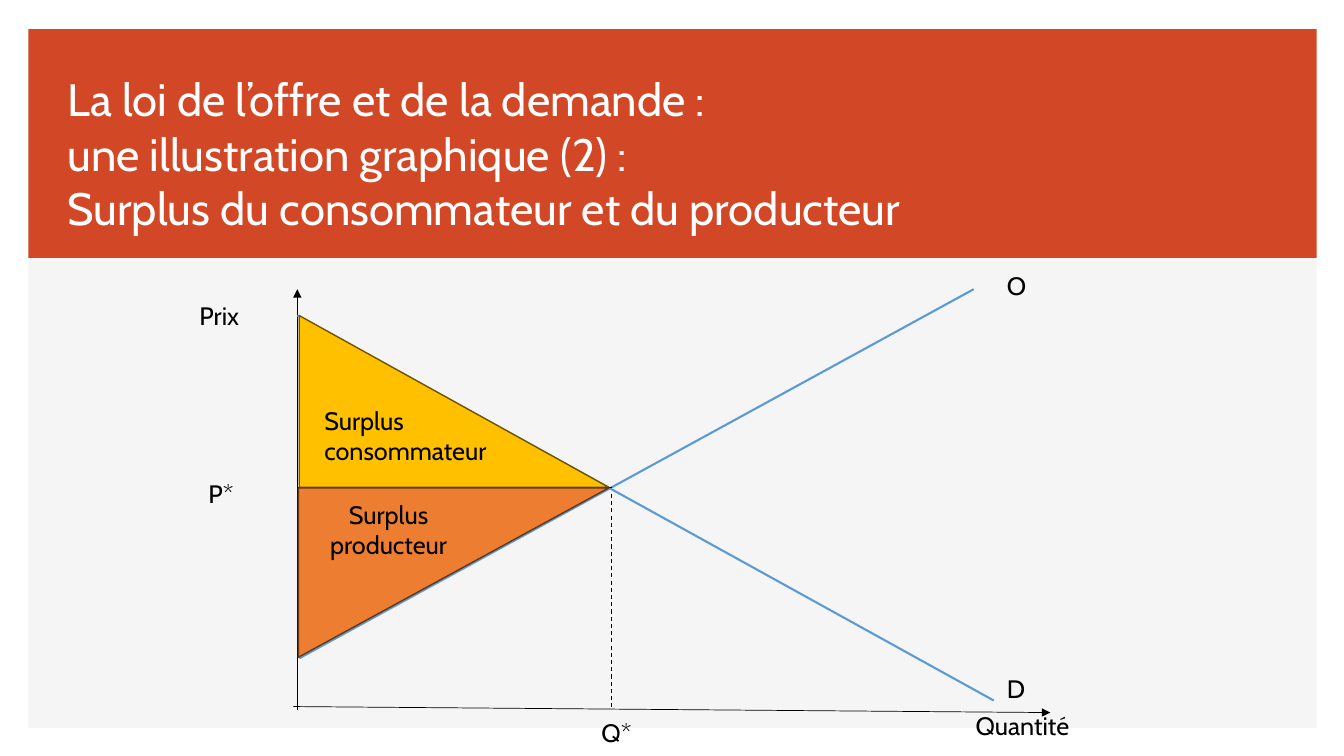
"""Build the slide on consumer and producer surplus."""
from lxml.etree import SubElement
from pptx import Presentation
from pptx.dml.color import RGBColor
from pptx.enum.dml import MSO_LINE
from pptx.enum.shapes import MSO_CONNECTOR, MSO_SHAPE
from pptx.enum.text import MSO_ANCHOR, MSO_AUTO_SIZE, PP_ALIGN
from pptx.oxml.ns import qn
from pptx.util import Pt

FONT = "Cabin"
INK = {
    "panel": "F5F5F5", "band": "D24726", "white": "FFFFFF", "black": "000000",
    "curve": "5B9BD5", "gold": "FFC000", "brown": "705400",
    "orange": "ED7D31", "rust": "683715",
}


def block(kind, box, fill, edge=None):
    shape = slide.shapes.add_shape(kind, *map(Pt, box))
    shape.shadow.inherit = False
    shape.fill.solid()
    shape.fill.fore_color.rgb = RGBColor.from_string(INK[fill])
    if edge:
        shape.line.color.rgb = RGBColor.from_string(INK[edge])
        shape.line.width = Pt(1)
    else:
        shape.line.fill.background()
    return shape


def style(frame, size, color, align):
    for para in frame.paragraphs:
        para.alignment = align
        for run in para.runs:
            run.font.name = FONT
            run.font.size = Pt(size)
            run.font.color.rgb = RGBColor.from_string(INK[color])


deck = Presentation()
deck.slide_width, deck.slide_height = Pt(960), Pt(540)
slide = deck.slides.add_slide(deck.slide_layouts[5])

block(MSO_SHAPE.RECTANGLE, (20.2, 20.9, 920.2, 499), "panel")
block(MSO_SHAPE.RECTANGLE, (20.2, 20.9, 920.2, 163.4), "band")

title = slide.shapes.title
slide.shapes.element.append(title.element)
title.left, title.top, title.width, title.height = map(Pt, (41, 121, 861.8, 50.4))
frame = title.text_frame
frame.text = ("La loi de l’offre et de la demande : \v"
              "une illustration graphique (2) : \v"
              "Surplus du consommateur et du producteur")
frame.word_wrap = True
frame.auto_size = MSO_AUTO_SIZE.NONE
frame.vertical_anchor = MSO_ANCHOR.BOTTOM
style(frame, 32.4, "white", PP_ALIGN.LEFT)

lines = [
    ((209.5, 504.7, 750.2, 509), "black", 0.5, False, True),
    ((212.4, 506.9, 212.4, 206.6), "black", 0.5, False, True),
    ((213.8, 470.2, 695.5, 206.6), "curve", 1.5, False, False),
    ((709.9, 500.4, 212.4, 225.4), "curve", 1.5, False, False),
    ((437, 352.8, 437, 504.7), "black", 0.75, True, False),
    ((212.4, 348.5, 439.2, 348.5), "black", 0.75, True, False),
]
for ends, color, width, dashed, arrow in lines:
    link = slide.shapes.add_connector(MSO_CONNECTOR.STRAIGHT, *map(Pt, ends))
    link.line.color.rgb = RGBColor.from_string(INK[color])
    link.line.width = Pt(width)
    if dashed:
        link.line.dash_style = MSO_LINE.DASH
    props = link.element.spPr
    if arrow:
        SubElement(props.find(qn("a:ln")), qn("a:tailEnd"), type="triangle")
    SubElement(props, qn("a:effectLst"))

block(MSO_SHAPE.RIGHT_TRIANGLE, (213.8, 225.4, 221, 122.6), "gold", "brown")
lower = block(MSO_SHAPE.RIGHT_TRIANGLE, (213.1, 348.5, 221.8, 121), "orange", "rust")
lower.element.spPr.find(qn("a:xfrm")).set("flipV", "1")

labels = [
    ("Prix", (135.4, 211, 99.4, 29), PP_ALIGN.LEFT),
    ("Quantité", (689.8, 504, 99.4, 29), PP_ALIGN.LEFT),
    ("O", (712.1, 189.4, 33.1, 29), PP_ALIGN.LEFT),
    ("D", (712.1, 477.4, 27.4, 29), PP_ALIGN.LEFT),
    ("Surplus consommateur", (224.6, 285.8, 145.4, 51), PP_ALIGN.LEFT),
    ("Q*", (422.6, 509, 43.2, 29), PP_ALIGN.LEFT),
    ("P*", (141.8, 338.4, 48.2, 29), PP_ALIGN.LEFT),
    ("Surplus producteur", (212.4, 352.8, 130.3, 51), PP_ALIGN.CENTER),
]
for text, box, align in labels:
    frame = slide.shapes.add_textbox(*map(Pt, box)).text_frame
    frame.text = text
    frame.word_wrap = True
    style(frame, 18, "black", align)

deck.save("out.pptx")
